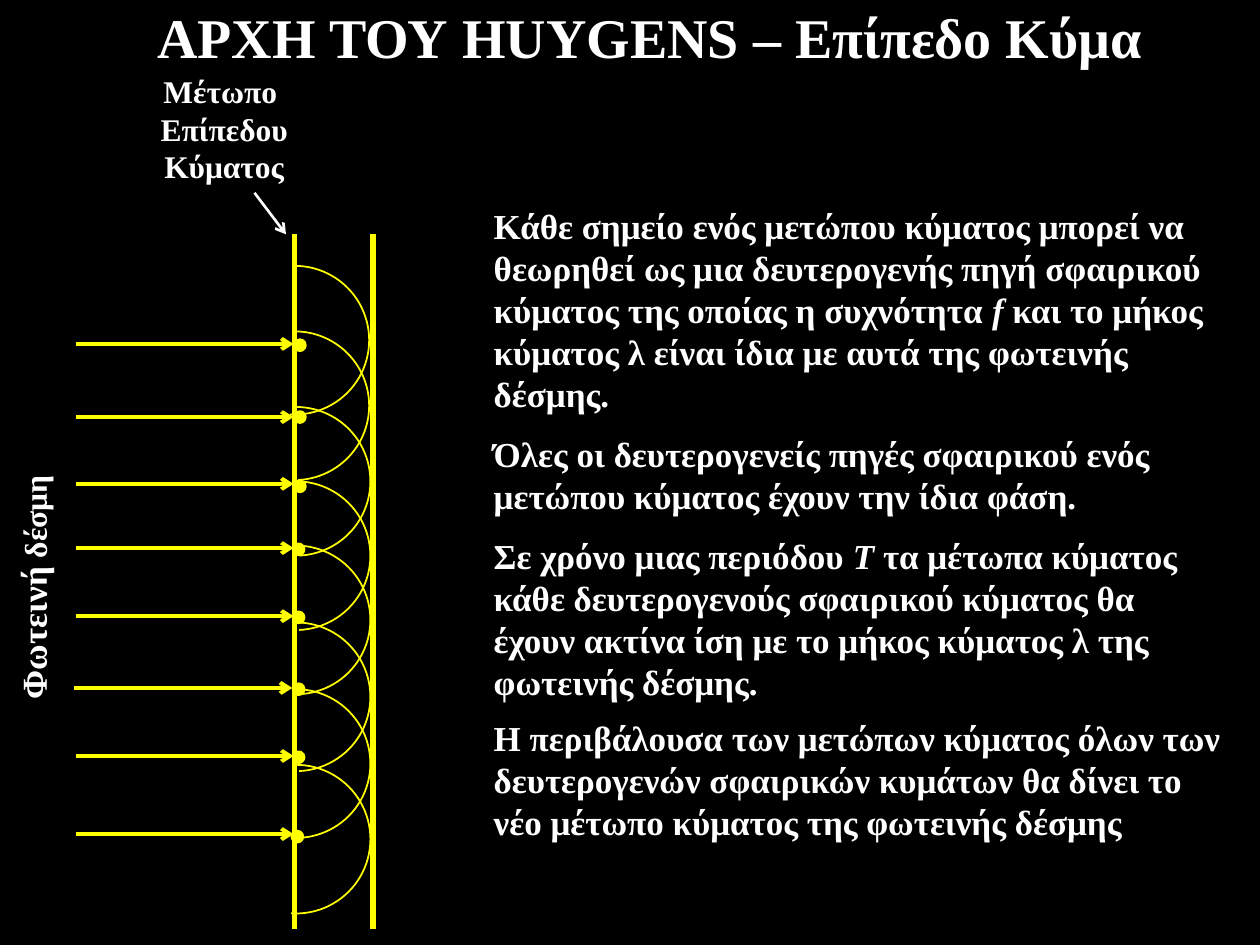
from lxml import etree
from pptx import Presentation
from pptx.dml.color import RGBColor
from pptx.enum.shapes import MSO_CONNECTOR, MSO_SHAPE
from pptx.enum.text import PP_ALIGN
from pptx.oxml.ns import qn
from pptx.util import Inches, Pt

STRAIGHT = MSO_CONNECTOR.STRAIGHT
ARC, OVAL = MSO_SHAPE.ARC, MSO_SHAPE.OVAL
LEFT, CENTER = PP_ALIGN.LEFT, PP_ALIGN.CENTER

THEME = {
    "font": "Times New Roman",
    "background": RGBColor(0, 0, 0),
    "text": RGBColor(255, 255, 255),
    "light": RGBColor(255, 255, 0),
    "title": 32, "body": 20, "label": 18,
}

# Each text is a list of paragraphs, each paragraph a list of (text, size, italic)
TITLE = [[("ΑΡΧΗ ΤΟΥ HUYGENS – Επίπεδο Κύμα", "title", False)]]
FRONT_LABEL = [[("Μέτωπο ", "label", False)],
               [("Επίπεδου Κύματος", "label", False)]]
BEAM_LABEL = [[("Φωτεινή ", "body", False), ("δέσμη", "label", False)]]

# Explanations: top, height, runs
EXPLANATIONS = [
    (1.57, 1.78, [
        ("Κάθε σημείο ενός μετώπου κύματος μπορεί να θεωρηθεί ως μια "
         "δευτερογενής πηγή σφαιρικού κύματος της οποίας η συχνότητα ", "body", False),
        ("f ", "body", True),
        ("και το μήκος κύματος λ είναι ίδια με αυτά της φωτεινής δέσμης.", "body", False)]),
    (3.38, 0.77, [
        ("Όλες οι δευτερογενείς πηγές σφαιρικού ενός μετώπου κύματος "
         "έχουν την ίδια φάση.", "body", False)]),
    (4.19, 1.45, [
        ("Σε χρόνο μιας περιόδου ", "body", False),
        ("Τ", "body", True),
        (" τα μέτωπα κύματος κάθε δευτερογενούς σφαιρικού κύματος θα έχουν "
         "ακτίνα ίση με το μήκος κύματος λ της φωτεινής δέσμης.", "body", False)]),
    (5.64, 1.11, [
        ("Η περιβάλουσα των μετώπων κύματος όλων των δευτερογενών σφαιρικών "
         "κυμάτων θα δίνει το νέο μέτωπο κύματος της φωτεινής δέσμης", "body", False)]),
]

# Geometry of the wave
FRONTS_X = (2.34, 2.96)
FRONT_TOP, FRONT_BOTTOM = 1.86, 7.37
RAY_LENGTH, DOT, WAVELET = 1.73, 0.08, 1.18
ARC_START, ARC_END, ARC_END_LONG = 162, 52.59, 56.27
# Sources: ray (x, y), dot (left, top), wavelet (left, top), wavelet end
SOURCES = [
    ((0.60, 2.73), (2.34, 2.70), (1.75, 2.11), ARC_END_LONG),
    ((0.60, 3.31), (2.34, 3.27), (1.75, 2.63), ARC_END),
    ((0.60, 3.84), (2.34, 3.82), (1.76, 3.23), ARC_END),
    ((0.60, 4.35), (2.33, 4.32), (1.76, 3.82), ARC_END),
    ((0.60, 4.89), (2.33, 4.86), (1.76, 4.33), ARC_END),
    ((0.59, 5.46), (2.33, 5.43), (1.76, 4.94), ARC_END),
    ((0.60, 6.00), (2.33, 5.97), (1.76, 5.47), ARC_END),
    ((0.60, 6.62), (2.32, 6.60), (1.76, 6.07), ARC_END_LONG),
]


def add_text(s, paragraphs, left, top, width, height, align=LEFT, rotation=0):
    box = s.shapes.add_textbox(Inches(left), Inches(top), Inches(width), Inches(height))
    box.rotation = rotation
    tf = box.text_frame
    tf.word_wrap = True
    for i, runs in enumerate(paragraphs):
        p = tf.add_paragraph() if i else tf.paragraphs[0]
        p.alignment = align
        for text, size, italic in runs:
            r = p.add_run()
            r.text = text
            r.font.name = THEME["font"]
            r.font.size = Pt(THEME[size])
            r.font.bold = True
            r.font.italic = italic
            r.font.color.rgb = THEME["text"]


def add_line(s, x1, y1, x2, y2, color, width, arrow=False):
    line = s.shapes.add_connector(STRAIGHT, Inches(x1), Inches(y1), Inches(x2), Inches(y2))
    line.line.color.rgb = THEME[color]
    line.line.width = Pt(width)
    if arrow:
        etree.SubElement(line.line._get_or_add_ln(), qn("a:tailEnd"), type="arrow")
    etree.SubElement(line._element.spPr, qn("a:effectLst"))


def add_round(s, kind, left, top, size, width):
    sp = s.shapes.add_shape(kind, Inches(left), Inches(top), Inches(size), Inches(size))
    sp.shadow.inherit = False
    sp.line.color.rgb = THEME["light"]
    sp.line.width = Pt(width)
    return sp


def main():
    prs = Presentation()
    prs.slide_width, prs.slide_height = Inches(10), Inches(7.5)
    s = prs.slides.add_slide(prs.slide_layouts[6])
    s.background.fill.solid()
    s.background.fill.fore_color.rgb = THEME["background"]

    # Title and labels
    add_text(s, TITLE, 0.91, -0.03, 8.5, 0.63, CENTER)
    add_text(s, FRONT_LABEL, 0.68, 0.52, 2.2, 1.01, CENTER)
    add_text(s, BEAM_LABEL, -0.96, 4.44, 2.45, 0.44, CENTER, 270)
    add_line(s, 2.02, 1.53, 2.27, 1.86, "text", 1.5, arrow=True)

    # Old and new plane wave fronts
    for x in FRONTS_X:
        add_line(s, x, FRONT_TOP, x, FRONT_BOTTOM, "light", 3)

    # Rays, point sources and secondary wavelets
    for (x, y), dot_at, wavelet_at, arc_end in SOURCES:
        add_line(s, x, y, x + RAY_LENGTH, y, "light", 2.25, arrow=True)
        dot = add_round(s, OVAL, *dot_at, DOT, 2)
        dot.fill.solid()
        dot.fill.fore_color.rgb = THEME["light"]
        wavelet = add_round(s, ARC, *wavelet_at, WAVELET, 1)
        wavelet.fill.background()
        wavelet.adjustments[0] = ARC_START
        wavelet.adjustments[1] = arc_end

    # Explanations
    for top, height, runs in EXPLANATIONS:
        add_text(s, [runs], 3.82, top, 5.98, height)

    prs.save("out.pptx")


if __name__ == "__main__":
    main()
